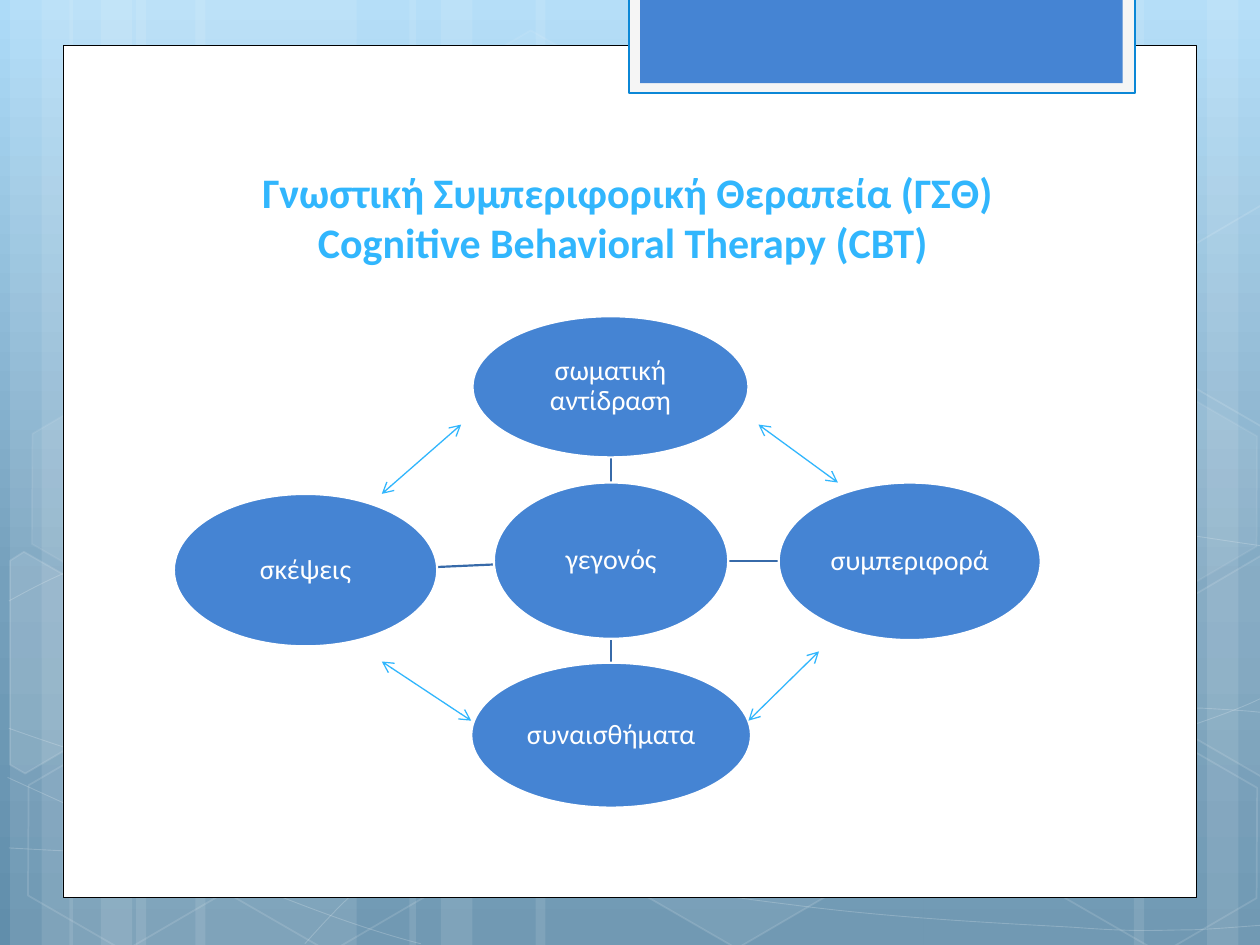
import copy
from dataclasses import dataclass

import lxml.etree
import pptx
import pptx.dml.color
import pptx.enum.shapes
import pptx.enum.text
import pptx.oxml.ns
import pptx.util

SHAPE = pptx.enum.shapes.MSO_SHAPE
ANCHOR = pptx.enum.text.MSO_ANCHOR
COLUMNS, ROWS = 10, 7.5
CELL = pptx.util.Inches(1)


@dataclass(frozen=True)
class Theme:
    """Colours, font and type sizes of the slide."""
    sky: tuple = ((0, "ADDBF8"), (0.62, "75A0BC"), (1, "618EAB"))
    white: str = "FFFFFF"
    black: str = "000000"
    tab_edge: str = "0B87D6"
    tab_frame: str = "F5F5F5"
    blue: str = "4584D3"
    spoke: str = "376AA9"
    accent: str = "31B6FD"
    font: str = "Calibri"
    title_size: int = 24
    node_size: int = 16


THEME = Theme()
TITLE = "Γνωστική Συμπεριφορική Θεραπεία (ΓΣΘ)\vCognitive Behavioral Therapy (CBT) "
NODES = {"γεγονός": (3.92, 3.83, 1.86, 1.24), "σωματική αντίδραση": (3.75, 2.51, 2.19, 1.12),
         "συμπεριφορά": (6.18, 3.83, 2.08, 1.25), "συναισθήματα": (3.74, 5.26, 2.22, 1.15),
         "σκέψεις": (1.38, 3.92, 2.09, 1.21)}
SPOKES = [(4.85, 3.83, 4.85, 3.63), (5.78, 4.45, 6.18, 4.45),
          (4.85, 5.07, 4.85, 5.26), (3.92, 4.48, 3.47, 4.5)]
EXCHANGES = [(3.66, 3.37, 3.03, 3.92), (6.02, 3.37, 6.65, 3.83),
             (3.03, 5.25, 3.74, 5.72), (6.5, 5.17, 5.94, 5.72)]
BAND_GROUPS = [(0, 1.75), (0.47, 1.75), (3.17, 3.08)]
RIGHT_BANDS = [(7.33, 1.75), (9.58, 0.5), (9, 0.83)]
HEXAGONS = [(3.34, 0.36, 4, 8), (4.97, 5.89, 6, 12), (0.11, 5.91, 0, 12), (0.14, 3.12, 7, 8),
            (1.74, 5.92, 0, 12), (7.53, 4.53, 10, 12), (8.34, 5.93, 0, 12), (8.34, 3.14, 7, 8)]
CUT_HEXAGONS = [
    (10, [(0.08, 4.45), (0.19, 4.38), (0.96, 4.82), (0.95, 5.7), (0.2, 6.14), (0.08, 6.07)]),
    (4, [(9.26, 4.85), (10.01, 4.41), (10.09, 4.46), (10.09, 6.13), (10.02, 6.17), (9.26, 5.73)]),
    (0, [(9.26, 2.07), (10.01, 1.63), (10.1, 1.68), (10.09, 3.35), (10.02, 3.39), (9.26, 2.95)])]
WAVES = [
    [(0.07, 6.73), (0.61, 6.76), (1.15, 6.79), (1.9, 6.78), (2.65, 6.77), (3.58, 6.75), (4.58, 6.65),
     (5.58, 6.55), (7, 6.36), (7.92, 6.17), (8.83, 5.98), (9.77, 5.68), (10.07, 5.51)],
    [(0.07, 4.77), (0.36, 4.61), (0.65, 4.46), (1.21, 4.31), (1.78, 4.16), (2.59, 3.94), (3.47, 3.87),
     (4.36, 3.8), (5.44, 3.79), (6.54, 3.87), (7.64, 3.95), (9.47, 4.26), (10.07, 4.34)],
    [(0.06, 6.17), (1.27, 6.72), (2.47, 7.27), (3.34, 7.49)],
    [(0.07, 5.78), (0.38, 5.89), (0.7, 6), (1.28, 6.16), (1.86, 6.31), (2.73, 6.56), (3.57, 6.73),
     (4.4, 6.9), (5.45, 7.08), (6.28, 7.18), (7.11, 7.29), (8, 7.33), (8.53, 7.36), (9.05, 7.4),
     (9.19, 7.38), (9.45, 7.38), (9.71, 7.37), (9.89, 7.35), (10.07, 7.34)],
    [(2.42, 7.49), (2.6, 7.29), (2.78, 7.09), (3.02, 6.91), (3.26, 6.73), (3.6, 6.53), (3.88, 6.39),
     (4.16, 6.25), (4.33, 6.19), (4.7, 6.09), (5.06, 5.99), (5.73, 5.85), (6.08, 5.78), (6.44, 5.71),
     (6.49, 5.71), (6.8, 5.69), (7.11, 5.66), (7.6, 5.63), (7.94, 5.62), (8.29, 5.61), (8.86, 5.62),
     (8.86, 5.62), (9.08, 5.62), (9.3, 5.62), (9.53, 5.62), (9.71, 5.63), (9.88, 5.64), (9.97, 5.65),
     (10.06, 5.66), (10.03, 5.65), (10.06, 5.66)]]


def grid(*cells):
    """Turn grid columns and rows into slide lengths."""
    return [round(cell * CELL) for cell in cells]

def apply_format(target, values):
    """Set each named attribute on the target."""
    for name, value in values.items():
        setattr(target, name, value)

def paint(shape, fill=None, line=None, width=1, fill_opacity=100, line_opacity=100):
    """Give a shape its fill and outline, opacities in percent, without a shadow."""
    shape.shadow.inherit = False
    for part, color, tag, opacity in ((shape.fill, fill, "a:solidFill", fill_opacity),
                                      (shape.line.fill, line, "a:ln", line_opacity)):
        if color is None:
            part.background()
            continue
        part.solid()
        part.fore_color.rgb = pptx.dml.color.RGBColor.from_string(color)
        if opacity < 100:
            tint = next(shape.element.spPr.find(pptx.oxml.ns.qn(tag)).iter(pptx.oxml.ns.qn("a:srgbClr")))
            lxml.etree.SubElement(tint, pptx.oxml.ns.qn("a:alpha"), val=str(opacity * 1000))
    if line:
        shape.line.width = pptx.util.Pt(width)

def add_block(slide, kind, cells, **look):
    """Add a painted preset shape on the grid."""
    block = slide.shapes.add_shape(kind, *grid(*cells))
    paint(block, **look)
    return block

def add_outline(slide, points, close, **look):
    """Add a painted outline through grid points."""
    corners = [grid(*point) for point in points]
    builder = slide.shapes.build_freeform(*corners[0])
    builder.add_line_segments(corners[1:], close=close)
    outline = builder.convert_to_shape()
    paint(outline, **look)
    return outline

def bend(outline):
    """Turn every three straight segments into one cubic curve."""
    segments = list(outline.element.iter(pptx.oxml.ns.qn("a:lnTo")))
    for start in range(0, len(segments), 3):
        curve = lxml.etree.SubElement(segments[start].getparent(), pptx.oxml.ns.qn("a:cubicBezTo"))
        for segment in segments[start:start + 3]:
            curve.append(segment[0])
            segment.getparent().remove(segment)

def write_text(shape, text, frame_format, paragraph_format, font_format, color):
    """Write one paragraph into a shape."""
    shape.text_frame.text = text
    paragraph = shape.text_frame.paragraphs[0]
    apply_format(shape.text_frame, {"word_wrap": True, **frame_format})
    apply_format(paragraph, {"alignment": pptx.enum.text.PP_ALIGN.CENTER, **paragraph_format})
    for run in paragraph.runs:
        apply_format(run.font, {"name": THEME.font, **font_format})
        run.font.color.rgb = pptx.dml.color.RGBColor.from_string(color)

def add_link(slide, ends, color, width, arrows=()):
    """Add a straight connector with open arrowheads at the named ends."""
    link = slide.shapes.add_connector(pptx.enum.shapes.MSO_CONNECTOR.STRAIGHT, *grid(*ends))
    link.line.color.rgb = pptx.dml.color.RGBColor.from_string(color)
    link.line.width = pptx.util.Pt(width)
    for tag in arrows:
        stroke = link.element.spPr.find(pptx.oxml.ns.qn("a:ln"))
        lxml.etree.SubElement(stroke, pptx.oxml.ns.qn(tag), type="arrow")
    lxml.etree.SubElement(link.element.spPr, pptx.oxml.ns.qn("a:effectLst"))

def add_sky(slide):
    """Fill the background with a vertical gradient."""
    fill = slide.background.fill
    fill.gradient()
    fill.gradient_angle = 270
    stop_list = slide.element.find(".//" + pptx.oxml.ns.qn("a:gsLst"))
    stop_list.insert(1, copy.deepcopy(stop_list[0]))
    for stop, (position, color) in zip(fill.gradient_stops, THEME.sky):
        stop.position = position
        stop.color.rgb = pptx.dml.color.RGBColor.from_string(color)

def add_backdrop(slide):
    """Add the bands, waves and hexagons behind the page."""
    bands = [(start + shift, width) for shift, wide in BAND_GROUPS
             for start, width in ((1.08, wide), (0.08, 0.5), (0.33, 0.83))]
    for left, width in bands + RIGHT_BANDS:
        add_block(slide, SHAPE.RECTANGLE, (left, 0, width, ROWS), fill=THEME.white, fill_opacity=10)
    for knots in WAVES:
        bend(add_outline(slide, knots, False, line=THEME.white, width=0.5, line_opacity=20))
    for left, top, tint, edge in HEXAGONS:
        hexagon = add_block(slide, SHAPE.HEXAGON, (left, top, 1.75, 1.52), line=THEME.white,
                            line_opacity=edge, fill=THEME.white if tint else None, fill_opacity=tint)
        hexagon.adjustments[0] = 0.285
        hexagon.rotation = 30
    for tint, corners in CUT_HEXAGONS:
        add_outline(slide, corners, True, line=THEME.white, line_opacity=12,
                    fill=THEME.white if tint else None, fill_opacity=tint)

def add_page(slide):
    """Add the white page, its top tab and the title."""
    for cells, look in (((0.5, 0.36, 9, 6.76), {"fill": THEME.white, "line": THEME.black, "width": 0.5}),
                        ((4.99, -0.02, 4.02, 0.76),
                         {"fill": THEME.tab_frame, "line": THEME.tab_edge, "width": 1.25}),
                        ((5.08, -0.02, 3.83, 0.68), {"fill": THEME.blue})):
        add_block(slide, SHAPE.RECTANGLE, cells, **look)
    title = slide.shapes.add_textbox(*grid(1.14, 1.12, 7.68, 1.05))
    write_text(title, TITLE, {"vertical_anchor": ANCHOR.BOTTOM}, {},
               {"size": pptx.util.Pt(THEME.title_size), "bold": True}, THEME.accent)

def add_diagram(slide):
    """Add the event, its four responses and the links between them."""
    margins = dict.fromkeys(("margin_left", "margin_top", "margin_right", "margin_bottom"), grid(0.01)[0])
    for ends in SPOKES:
        add_link(slide, ends, THEME.spoke, 1.25)
    for label, cells in NODES.items():
        node = add_block(slide, SHAPE.OVAL, cells, fill=THEME.blue, line=THEME.white, width=1.25)
        write_text(node, label, {"vertical_anchor": ANCHOR.MIDDLE, **margins}, {"line_spacing": 0.9},
                   {"size": pptx.util.Pt(THEME.node_size)}, THEME.white)
    for ends in EXCHANGES:
        add_link(slide, ends, THEME.accent, 0.75, ("a:headEnd", "a:tailEnd"))

def main():
    """Build the slide and save it."""
    deck = pptx.Presentation()
    deck.slide_width, deck.slide_height = grid(COLUMNS, ROWS)
    slide = deck.slides.add_slide(deck.slide_layouts[6])
    for add_layer in (add_sky, add_backdrop, add_page, add_diagram):
        add_layer(slide)
    deck.save("out.pptx")


if __name__ == "__main__":
    main()
